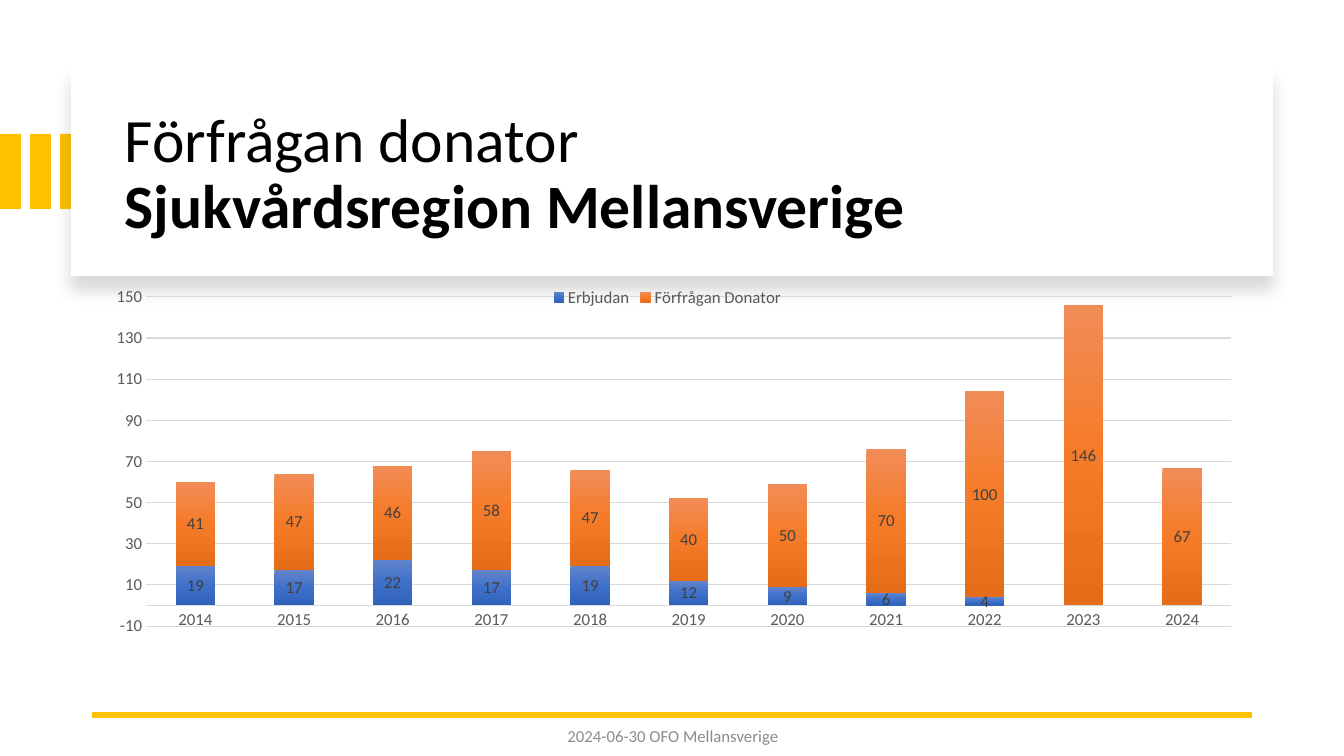
from lxml import etree
from pptx import Presentation
from pptx import util as u
from pptx.chart.data import CategoryChartData
from pptx.dml.color import RGBColor
from pptx.enum import chart as ch, shapes, text
from pptx.oxml import ns

EMU_PER_PX = 914400 / 100.8
FONT = "Calibri"
BLACK = RGBColor(0x00, 0x00, 0x00)
WHITE = RGBColor(0xFF, 0xFF, 0xFF)
AMBER = RGBColor(0xFF, 0xC0, 0x00)
FOOTER_GREY = RGBColor(0x8C, 0x8C, 0x8C)
AXIS_GREY = RGBColor(0x59, 0x59, 0x59)
LABEL_GREY = RGBColor(0x40, 0x40, 0x40)
GRID_GREY = RGBColor(0xD9, 0xD9, 0xD9)
BLUES = (RGBColor(0x61, 0x83, 0xCB), RGBColor(0x3E, 0x70, 0xCA), RGBColor(0x30, 0x62, 0xBB))
ORANGES = (RGBColor(0xF1, 0x8C, 0x57), RGBColor(0xF6, 0x7B, 0x28), RGBColor(0xE5, 0x6C, 0x19))

YEARS = [str(year) for year in range(2014, 2025)]
SERIES = [
    ("Erbjudan", [19, 17, 22, 17, 19, 12, 9, 6, 4, None, None], BLUES),
    ("Förfrågan Donator", [41, 47, 46, 58, 47, 40, 50, 70, 100, 146, 67], ORANGES),
]
PLOT_LAYOUT = {"layoutTarget": "inner", "xMode": "edge", "yMode": "edge",
               "x": 0.047, "y": 0.051, "w": 0.943, "h": 0.803}


def px(*lengths):
    return [u.Emu(round(length * EMU_PER_PX)) for length in lengths]


def add_xml(parent, tag, **attributes):
    return etree.SubElement(parent, ns.qn(tag), {k: str(v) for k, v in attributes.items()})


def set_all(target, values):
    for name, value in values.items():
        setattr(target, name, value)


def style_font(font, size, color, bold=False):
    set_all(font, {"name": FONT, "size": u.Pt(size), "bold": bold})
    font.color.rgb = color


def add_block(slide, box, color):
    block = slide.shapes.add_shape(shapes.MSO_SHAPE.RECTANGLE, *px(*box))
    block.shadow.inherit = False
    block.fill.solid()
    block.fill.fore_color.rgb = color
    block.line.fill.background()
    return block


def add_soft_shadow(block):
    effects = block._element.spPr.find(ns.qn("a:effectLst"))
    shadow = add_xml(effects, "a:outerShdw", blurRad=u.Pt(11), dist=u.Pt(10),
                     dir=5400000, algn="t", rotWithShape=0)
    color = add_xml(shadow, "a:srgbClr", val=BLACK)
    add_xml(color, "a:alpha", val=15000)


def add_text(slide, box, lines, size, color, **paragraph_format):
    """Write (wording, bold) lines as one paragraph with line breaks."""
    frame = slide.shapes.add_textbox(*px(*box)).text_frame
    set_all(frame, {"word_wrap": True, "vertical_anchor": text.MSO_ANCHOR.MIDDLE})
    paragraph = frame.paragraphs[0]
    set_all(paragraph, paragraph_format)
    for index, (wording, bold) in enumerate(lines):
        if index:
            paragraph.add_line_break()
        run = paragraph.add_run()
        run.text = wording
        style_font(run.font, size, color, bold)


def add_rule(slide, start, end, color, width):
    rule = slide.shapes.add_connector(shapes.MSO_CONNECTOR.STRAIGHT, *px(*start, *end))
    rule.line.color.rgb = color
    rule.line.width = u.Pt(width)
    add_xml(rule._element.spPr, "a:effectLst")


def fill_gradient(series, colors):
    """Spread the colours evenly from the top of each column to its foot."""
    series.format.fill.gradient()
    gradient = series._element.spPr.find(ns.qn("a:gradFill"))
    for child in list(gradient):
        gradient.remove(child)
    stops = add_xml(gradient, "a:gsLst")
    for index, color in enumerate(colors):
        stop = add_xml(stops, "a:gs", pos=index * 100000 // (len(colors) - 1))
        add_xml(stop, "a:srgbClr", val=color)
    add_xml(gradient, "a:lin", ang=5400000, scaled=0)


def set_plot_layout(chart):
    area = chart._chartSpace.chart.plotArea
    for old in area.findall(ns.qn("c:layout")):
        area.remove(old)
    layout = etree.Element(ns.qn("c:layout"))
    area.insert(0, layout)
    manual = add_xml(layout, "c:manualLayout")
    for name, value in PLOT_LAYOUT.items():
        add_xml(manual, f"c:{name}", val=value)


def style_axes(chart):
    for axis in (chart.category_axis, chart.value_axis):
        set_all(axis, {"major_tick_mark": ch.XL_TICK_MARK.NONE,
                       "minor_tick_mark": ch.XL_TICK_MARK.NONE})
        style_font(axis.tick_labels.font, 12, AXIS_GREY)
    year_line = chart.category_axis.format.line
    year_line.color.rgb = GRID_GREY
    year_line.width = u.Pt(1)
    counts = chart.value_axis
    set_all(counts, {"minimum_scale": -10, "maximum_scale": 150, "major_unit": 20})
    counts.format.line.fill.background()
    grid = counts.major_gridlines.format.line
    grid.color.rgb = GRID_GREY
    grid.width = u.Pt(0.75)


def add_stacked_chart(slide, box):
    data = CategoryChartData()
    data.categories = YEARS
    for name, values, _ in SERIES:
        data.add_series(name, values)
    chart = slide.shapes.add_chart(ch.XL_CHART_TYPE.COLUMN_STACKED, *px(*box), data).chart
    chart.has_title = False
    style_font(chart.font, 10, BLACK)
    chart.has_legend = True
    set_all(chart.legend, {"position": ch.XL_LEGEND_POSITION.TOP, "include_in_layout": False})
    style_font(chart.legend.font, 12, AXIS_GREY)
    style_axes(chart)
    plot = chart.plots[0]
    set_all(plot, {"gap_width": 150, "overlap": 100, "vary_by_categories": False})
    for series, (_, _, colors) in zip(plot.series, SERIES):
        fill_gradient(series, colors)
        labels = series.data_labels
        set_all(labels, {"show_value": True, "position": ch.XL_LABEL_POSITION.CENTER})
        style_font(labels.font, 12, LABEL_GREY)
    set_plot_layout(chart)


def main():
    deck = Presentation()
    deck.slide_width, deck.slide_height = px(1344, 756)
    slide = deck.slides.add_slide(deck.slide_layouts[6])

    for index in range(3):
        add_block(slide, (index * 30, 134, 21, 75), AMBER)
    add_soft_shadow(add_block(slide, (71, 67, 1202, 209), WHITE))
    add_text(slide, (115, 90, 1122, 171),
             [("Förfrågan donator", False), ("Sjukvårdsregion Mellansverige", True)],
             44, BLACK, line_spacing=0.9)
    add_rule(slide, (1252, 715), (92, 715), AMBER, 4.5)
    add_text(slide, (446, 716, 454, 40), [("2024-06-30 OFO Mellansverige", False)],
             12, FOOTER_GREY, alignment=text.PP_ALIGN.CENTER, space_after=u.Pt(6))
    add_stacked_chart(slide, (92, 276, 1151, 410))
    deck.save("out.pptx")


if __name__ == "__main__":
    main()
